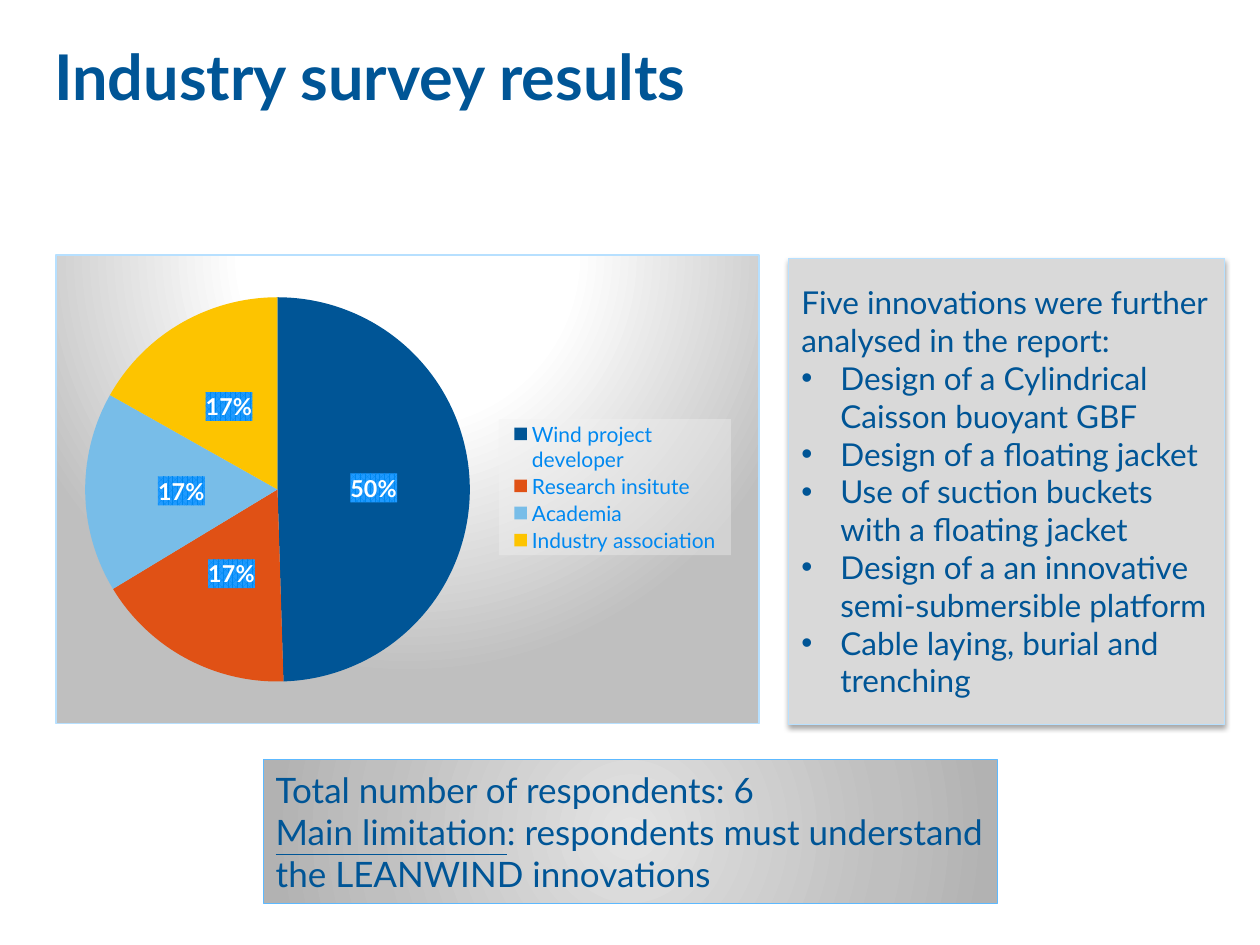
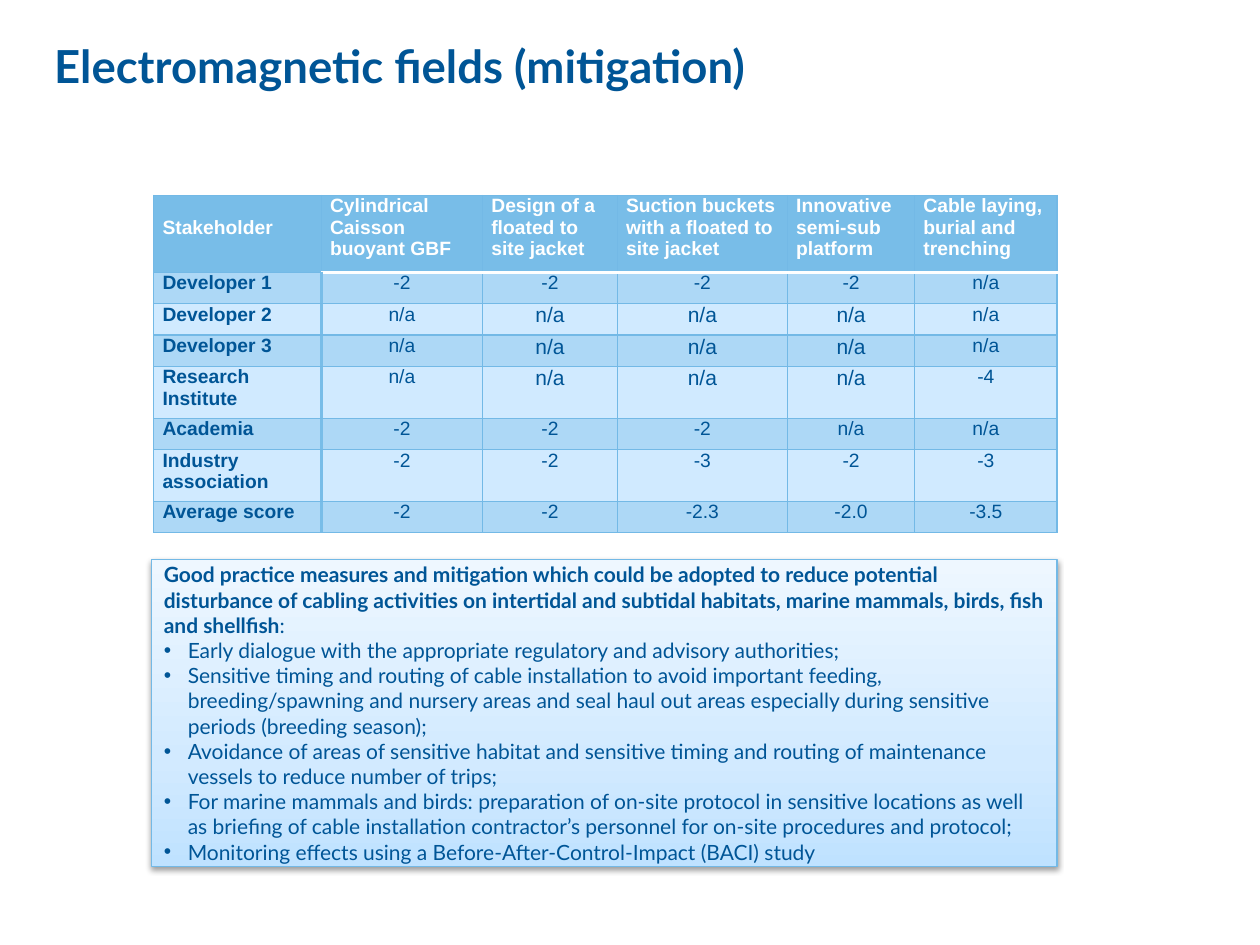
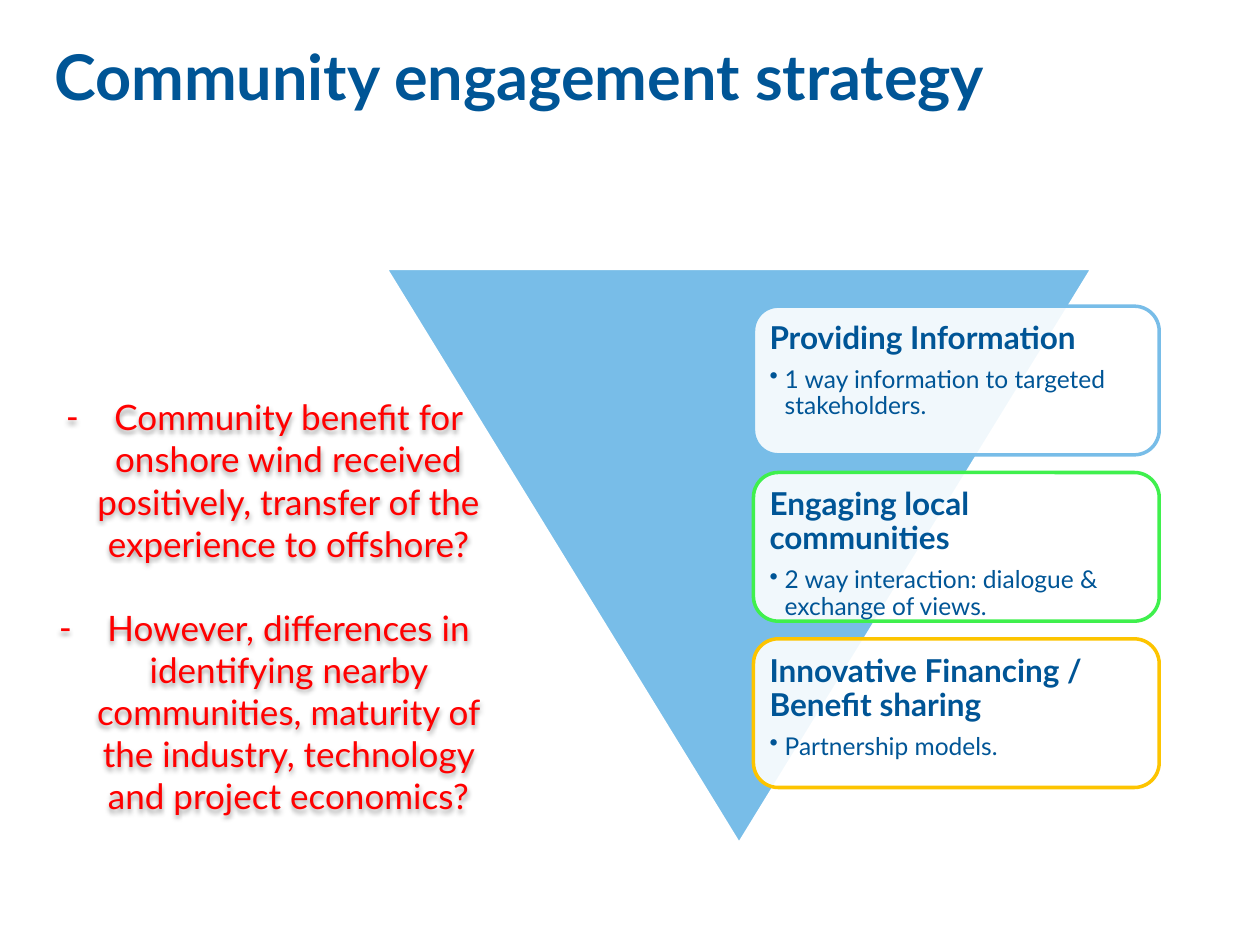
from pptx import Presentation
from pptx.chart.data import CategoryChartData as PieData
from pptx.dml.color import RGBColor as RGB
from pptx.enum.chart import XL_CHART_TYPE as Kind, XL_LABEL_POSITION as Spot
from pptx.enum.chart import XL_LEGEND_POSITION as Side
from pptx.enum.shapes import MSO_SHAPE as Form
from pptx.enum.text import MSO_ANCHOR as Anchor, MSO_AUTO_SIZE as Fit, PP_ALIGN as Align
from pptx.oxml import parse_xml as to_xml
from pptx.oxml.ns import nsdecls, qn
from pptx.util import Inches, Pt

WIDE, HIGH = Inches(10), Inches(7.5)
FACE = "Lato"
NAVY = RGB(0x00, 0x55, 0x96)
SKY = RGB(0x78, 0xBD, 0xE8)
EDGE = RGB(0x73, 0xB9, 0xE6)
PALE = RGB(0xB7, 0xE0, 0xFF)
BLUE = RGB(0x5D, 0xB9, 0xFF)
AZURE = RGB(0x00, 0x88, 0xF0)
GLOW = RGB(0x1F, 0x9A, 0xFF)
DARK_ROW = RGB(0xAD, 0xD8, 0xF6)
LIGHT_ROW = RGB(0xD0, 0xEA, 0xFF)
WHITE = RGB(0xFF, 0xFF, 0xFF)
MIST = RGB(0xF2, 0xF2, 0xF2)
GREY = RGB(0xD9, 0xD9, 0xD9)
RED = RGB(0xFF, 0x00, 0x00)
RUST = RGB(0xE0, 0x51, 0x15)
GOLD = RGB(0xFD, 0xC4, 0x00)
GREEN = RGB(0x3F, 0xF0, 0x4D)

SURVEY = [("Wind project developer", 50, NAVY), ("Research insitute", 17, RUST),
          ("Academia", 17, SKY), ("Industry association", 17, GOLD)]
IDEAS = ["Design of a Cylindrical Caisson buoyant GBF",
         "Design of a floating jacket",
         "Use of suction buckets with a floating jacket",
         "Design of a an innovative semi-submersible platform",
         "Cable laying, burial and trenching"]
SCORES = [
    ["Stakeholder", "Cylindrical Caisson buoyant GBF", "Design of a floated to site jacket",
     "Suction buckets with a floated to site jacket", "Innovative semi-sub platform",
     "Cable laying, burial and trenching"],
    ["Developer 1", "-2", "-2", "-2", "-2", "n/a"],
    ["Developer 2", "n/a", "n/a", "n/a", "n/a", "n/a"],
    ["Developer 3", "n/a", "n/a", "n/a", "n/a", "n/a"],
    ["Research Institute", "n/a", "n/a", "n/a", "n/a", "-4"],
    ["Academia", "-2", "-2", "-2", "n/a", "n/a"],
    ["Industry association", "-2", "-2", "-3", "-2", "-3"],
    ["Average score", "-2", "-2", "-2.3", "-2.0", "-3.5"]]
COLS = [13.3, 12.8, 10.7, 13.5, 10.1, 11.3]
ROWS = [8.13, 3.33, 3.33, 3.33, 5.47, 3.33, 5.47, 3.33]
GOOD = ("Good practice measures and mitigation which could be adopted to reduce potential "
        "disturbance of cabling activities on intertidal and subtidal habitats, marine "
        "mammals, birds, fish and shellfish")
STEPS = [
    "Early dialogue with the appropriate regulatory and advisory authorities;",
    "Sensitive timing and routing of cable installation to avoid important feeding, "
    "breeding/spawning and nursery areas and seal haul out areas especially during "
    "sensitive periods (breeding season);",
    "Avoidance of areas of sensitive habitat and sensitive timing and routing of "
    "maintenance vessels to reduce number of trips;",
    "For marine mammals and birds: preparation of on-site protocol in sensitive locations "
    "as well as briefing of cable installation contractor’s personnel for on-site "
    "procedures and protocol;",
    "Monitoring effects using a Before-After-Control-Impact (BACI) study"]
CARDS = [("Providing Information", "1 way information to targeted stakeholders.", SKY),
         ("Engaging local communities", "2 way interaction: dialogue & exchange of views.", GREEN),
         ("Innovative Financing / Benefit sharing", "Partnership models.", GOLD)]
DOUBTS = ["Community benefit for onshore wind received positively, transfer of the "
          "experience to offshore?",
          "However, differences in identifying nearby communities, maturity of the industry, "
          "technology and project economics?"]


def area(left, top, width, height):
    """Turn percentages of the slide into lengths."""
    return [int(share * full / 100)
            for share, full in zip((left, top, width, height), (WIDE, HIGH) * 2)]


def move(shape, box):
    """Place a shape on a box given in percent."""
    shape.left, shape.top, shape.width, shape.height = area(*box)


def style(font, size, color=NAVY, bold=False, face=FACE):
    """Set the look of a font."""
    font.name, font.size, font.bold = face, Pt(size), bold
    font.color.rgb = color


def put(par, text, size, align=Align.LEFT, **look):
    """Write one evenly styled paragraph."""
    par.text, par.alignment, par.space_before = text, align, Pt(0)
    style(par.font, size, **look)


def mark(par, sign, indent):
    """Give a paragraph a hanging bullet, or none for an empty sign."""
    props = par._p.get_or_add_pPr()
    props.set("marL", str(Inches(indent)))
    props.set("indent", str(-Inches(indent)))
    tag = f'buChar char="{sign}"' if sign else "buNone"
    props.append(to_xml(f"<a:{tag} {nsdecls('a')}/>"))


def add_par(frame):
    """Return the empty first paragraph, or a new one."""
    first = frame.paragraphs[0]
    return frame.add_paragraph() if first.runs else first


def fade(stops, way):
    """Build the XML of a gradient fill."""
    marks = "".join(f'<a:gs pos="{at * 1000}"><a:srgbClr val="{tone}"/></a:gs>'
                    for at, tone in stops)
    return f"<a:gradFill {nsdecls('a')}><a:gsLst>{marks}</a:gsLst>{way}</a:gradFill>"


def round_way(top, bottom):
    """Build the XML of a circular gradient path."""
    return (f'<a:path path="circle"><a:fillToRect l="50000" t="{top * 1000}" '
            f'r="50000" b="{bottom * 1000}"/></a:path>')


def shade(shape, xml):
    """Fill a shape with a gradient."""
    shape.fill.background()
    props = shape.element.spPr
    props.replace(props.find(qn("a:noFill")), to_xml(xml))


def solid(shape, color, alpha=100):
    """Fill a shape with one colour, possibly see-through."""
    shape.fill.solid()
    shape.fill.fore_color.rgb = color
    if alpha < 100:
        tone = shape.element.spPr.find(qn("a:solidFill"))[0]
        tone.append(to_xml(f'<a:alpha {nsdecls("a")} val="{alpha * 1000}"/>'))


def trim(shape, color, width=0.75):
    """Set the outline and drop the theme's shadow."""
    shape.line.color.rgb, shape.line.width = color, Pt(width)
    shape.shadow.inherit = False


def drop(shape, alpha, blur, far):
    """Cast a soft shadow straight down."""
    shape.shadow.inherit = False
    shape.element.spPr.find(qn("a:effectLst")).append(to_xml(
        f'<a:outerShdw {nsdecls("a")} blurRad="{Pt(blur)}" dist="{Pt(far)}" dir="5400000" '
        f'rotWithShape="0"><a:srgbClr val="000000"><a:alpha val="{alpha * 1000}"/>'
        "</a:srgbClr></a:outerShdw>"))


def add_page(deck, title, box, size=36):
    """Add a slide with its title, and return it with its placed body."""
    page = deck.slides.add_slide(deck.slide_layouts[1])
    head, body = page.placeholders
    move(head, (3.3, 3.33, 87.5, 8.67))
    move(body, box)
    for shape, anchor in ((head, Anchor.TOP), (body, Anchor.MIDDLE)):
        frame = shape.text_frame
        frame.word_wrap, frame.auto_size, frame.vertical_anchor = True, Fit.NONE, anchor
    put(head.text_frame.paragraphs[0], title, size, bold=True)
    return page, body


def add_list(frame, items, size, indent, sign="•", **look):
    """Append bulleted paragraphs."""
    for item in items:
        par = add_par(frame)
        mark(par, sign, indent)
        put(par, item, size, **look)


def dress(node, fill, line=""):
    """Give a chart part a fill and a line."""
    node.find(qn("c:txPr")).addprevious(
        to_xml(f"<c:spPr {nsdecls('c', 'a')}>{fill}{line}</c:spPr>"))


def arrange(node, index, inner, **spots):
    """Set the manual layout of a chart part."""
    for old in node.findall(qn("c:layout")):
        node.remove(old)
    target = '<c:layoutTarget val="inner"/>' if inner else ""
    modes = '<c:xMode val="edge"/><c:yMode val="edge"/>'
    sizes = "".join(f'<c:{key} val="{val}"/>' for key, val in spots.items())
    node.insert(index, to_xml(f"<c:layout {nsdecls('c')}><c:manualLayout>{target}{modes}"
                              f"{sizes}</c:manualLayout></c:layout>"))


def add_pie(page, box):
    """Add the pie of respondents."""
    data = PieData()
    data.categories = [name for name, _, _ in SURVEY]
    data.add_series("Series 1", [val for _, val, _ in SURVEY])
    chart = page.shapes.add_chart(Kind.PIE, *area(*box), data).chart
    chart.has_title, chart.has_legend = False, True
    style(chart.font, 10)
    chart.plots[0].vary_by_categories = True
    chart.legend.position, chart.legend.include_in_layout = Side.RIGHT, False
    style(chart.legend.font, 12, AZURE)
    series = chart.plots[0].series[0]
    for i, (_, _, color) in enumerate(SURVEY):
        fill = series.points[i].format.fill
        fill.solid()
        fill.fore_color.rgb = color
    tags = series.data_labels
    tags.show_value, tags.show_percentage, tags.position = False, True, Spot.CENTER
    tags.number_format, tags.number_format_is_linked = "0%", False
    style(tags.font, 13.3, WHITE, True)
    root = chart.element
    plot, key, label = [root.xpath(way)[0] for way in
                        ("c:chart/c:plotArea", "c:chart/c:legend", ".//c:ser/c:dLbls")]
    arrange(plot, 0, True, x=0.04, y=0.09, w=0.55, h=0.82)
    arrange(key, 1, False, x=0.63, y=0.35, w=0.33, h=0.29)
    dress(root, fade([(0, WHITE), (39, WHITE), (100, "BFBFBF")], round_way(-80, 180)),
          f'<a:ln w="{Pt(0.75)}"><a:solidFill><a:srgbClr val="{PALE}"/></a:solidFill></a:ln>')
    dress(key, f'<a:solidFill><a:srgbClr val="{MIST}"><a:alpha val="39000"/></a:srgbClr>'
               "</a:solidFill>")
    dress(label, f'<a:pattFill prst="pct75"><a:fgClr><a:srgbClr val="{AZURE}"/></a:fgClr>'
                 f'<a:bgClr><a:srgbClr val="{GLOW}"/></a:bgClr></a:pattFill>')


def add_note(page, box):
    """Add the panel about the respondents."""
    note = page.shapes.add_shape(Form.RECTANGLE, *area(*box))
    shade(note, fade([(0, "E3E3E3"), (69, "BFBFBF"), (97, "B2B2B2")], round_way(50, 50)))
    trim(note, BLUE)
    frame = note.text_frame
    put(frame.paragraphs[0], "Total number of respondents: 6", 20)
    par = frame.add_paragraph()
    put(par, "Main limitation", 20)
    par.runs[0].font.underline = True
    par.add_run().text = ": respondents must understand the LEANWIND innovations"


def rule(cell, lines):
    """Draw the left, right, top and bottom borders of a cell."""
    for side, (color, width) in zip("LRTB", lines):
        cell._tc.get_or_add_tcPr().append(to_xml(
            f'<a:ln{side} {nsdecls("a")} w="{Pt(width)}"><a:solidFill>'
            f'<a:srgbClr val="{color}"/></a:solidFill></a:ln{side}>'))


def add_cell(cell, text, row, col):
    """Write and format one cell by its place in the table."""
    head, name = row == 0, col == 0
    thin, bar, gap = (EDGE, 0.75), (SKY, 2), (WHITE, 2)
    rule(cell, (bar if col == 1 and not head else thin,
                bar if name and not head else thin,
                gap if row == 1 and not name else thin,
                gap if head and not name else thin))
    cell.fill.solid()
    cell.fill.fore_color.rgb = SKY if head else DARK_ROW if row % 2 else LIGHT_ROW
    cell.margin_left = cell.margin_right = Inches(0.07)
    cell.margin_top = cell.margin_bottom = 0
    if head and name:
        cell.vertical_anchor, cell.margin_bottom = Anchor.MIDDLE, Inches(0.1)
    put(cell.text_frame.paragraphs[0], text, 12 if row in (2, 3, 4) and col in (2, 3, 4) else 11,
        Align.LEFT if head or name else Align.CENTER,
        color=WHITE if head else NAVY, bold=head or name, face="Arial")


def add_scores(page, box):
    """Add the table of scores."""
    table = page.shapes.add_table(len(ROWS), len(COLS), *area(*box)).table
    table.horz_banding = False
    for col, share in zip(table.columns, COLS):
        col.width = int(WIDE * share / 100)
    for row, share in zip(table.rows, ROWS):
        row.height = int(HIGH * share / 100)
    for i, line in enumerate(SCORES):
        for j, text in enumerate(line):
            add_cell(table.cell(i, j), text, i, j)


def add_card(page, row, head, text, color):
    """Add one step of the strategy."""
    card = page.shapes.add_shape(Form.ROUNDED_RECTANGLE,
                                 *area(59.8, 32.4 + 17.6 * row, 32.2, 15.73))
    solid(card, WHITE, 90)
    trim(card, color, 2)
    frame = card.text_frame
    frame.vertical_anchor = Anchor.TOP
    frame.margin_left = frame.margin_right = Inches(0.07)
    frame.margin_top = frame.margin_bottom = Inches(0.07)
    put(frame.paragraphs[0], head, 18, bold=True)
    add_list(frame, [text], 14, 0.12)
    for par, after in zip(frame.paragraphs, (6.3, 2.1)):
        par.line_spacing, par.space_after = 0.9, Pt(after)


def add_survey(deck):
    """Build the slide of survey results."""
    page, body = add_page(deck, "Industry survey results", (62.6, 27.33, 34.6, 49.33))
    solid(body, GREY)
    trim(body, PALE)
    drop(body, 35, 3.1, 1.8)
    add_list(body.text_frame, ["Five innovations were further analysed in the report:"], 18, 0, "")
    add_list(body.text_frame, IDEAS, 18, 0.31)
    add_pie(page, (4.4, 26.93, 55.9, 49.73))
    add_note(page, (20.9, 80.4, 58.3, 15.2))


def add_fields(deck):
    """Build the slide of electromagnetic fields."""
    page, body = add_page(deck, "Electromagnetic fields (mitigation)",
                          (12, 59.2, 71.9, 32.53), 26)
    shade(body, fade([(0, "BFE2FF"), (35, "D2EAFF"), (100, "EEF7FF")],
                     '<a:lin ang="16200000" scaled="0"/>'))
    trim(body, EDGE)
    drop(body, 38, 3.1, 1.6)
    frame = body.text_frame
    add_list(frame, [GOOD], 12, 0, "", bold=True)
    colon = frame.paragraphs[0].add_run()
    colon.text, colon.font.bold = ":", False
    add_list(frame, STEPS, 12, 0.19)
    add_scores(page, (12.2, 20.67, 71.6, 35.73))


def add_plan(deck):
    """Build the slide of the engagement strategy."""
    page, body = add_page(deck, "Community engagement strategy", (2, 40.53, 38, 47.2))
    drop(body, 38, 3.1, 1.8)
    add_list(body.text_frame, DOUBTS, 20, 0.38, "-", align=Align.CENTER, color=RED)
    body.text_frame.paragraphs[1].space_before = Pt(24)
    cone = page.shapes.add_shape(Form.ISOSCELES_TRIANGLE, *area(30.6, 28.4, 56.1, 60.93))
    cone.rotation = 180
    solid(cone, SKY)
    trim(cone, WHITE, 2)
    for row, card in enumerate(CARDS):
        add_card(page, row, *card)


def main():
    """Build and save the deck."""
    deck = Presentation()
    deck.slide_width, deck.slide_height = WIDE, HIGH
    add_survey(deck)
    add_fields(deck)
    add_plan(deck)
    deck.save("out.pptx")


if __name__ == "__main__":
    main()
